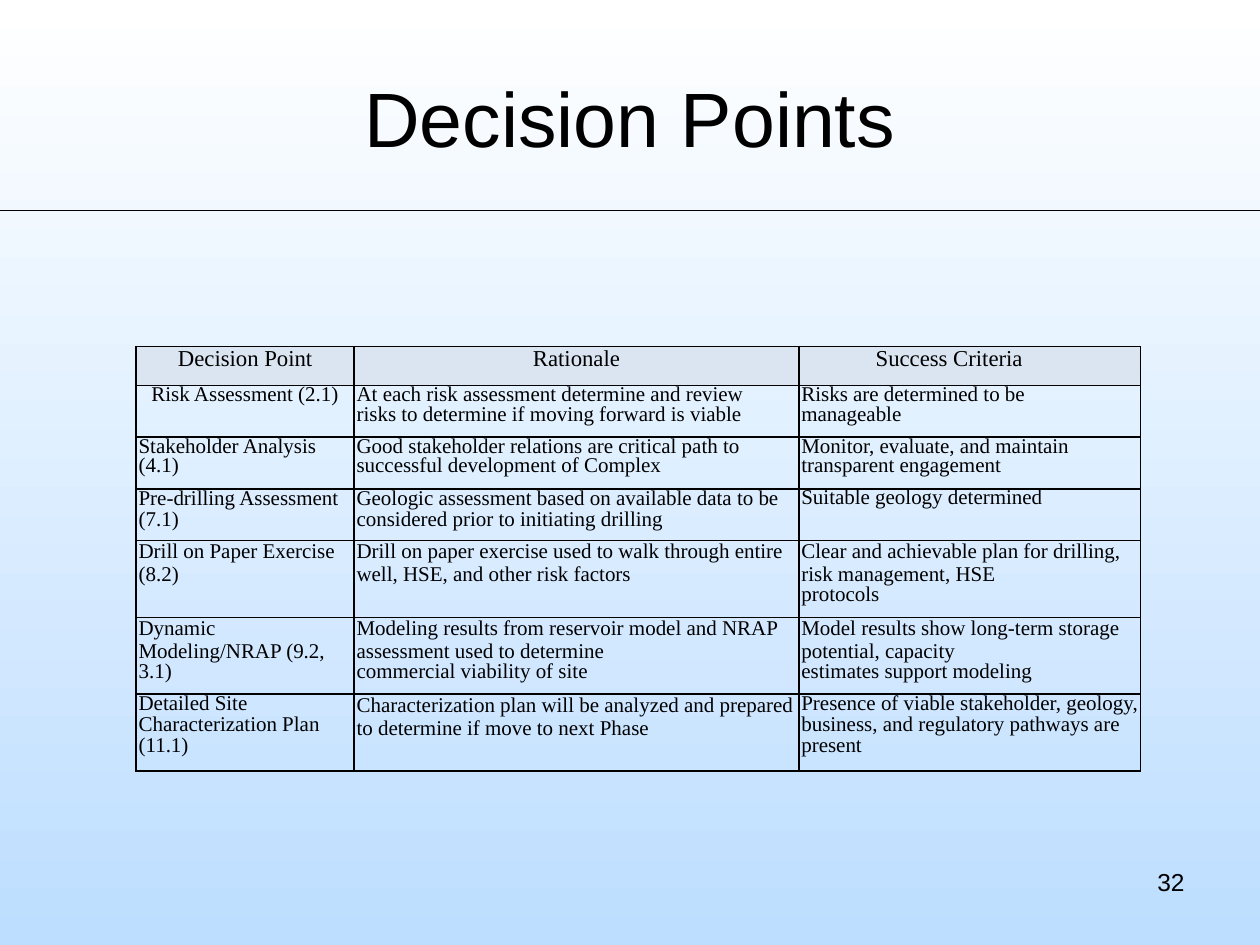
import pptx
import pptx.dml.color
import pptx.enum.shapes
import pptx.enum.text
import pptx.oxml
import pptx.oxml.ns
import pptx.util
from pptx.util import Inches

COLORS = {"ink": "000000", "sky_top": "FFFFFF", "sky_bottom": "BDDEFF", "header": "DBE5F1"}
ALIGN = pptx.enum.text.PP_ALIGN
ANCHOR = pptx.enum.text.MSO_ANCHOR
SERIF = "Times New Roman"
FIRST, NEXT, EVEN, LOOSE = pptx.util.Pt(11.8), pptx.util.Pt(11.2), pptx.util.Pt(12), 0.98

COLUMN_WIDTHS = (1.73, 3.53, 2.71)
ROW_HEIGHTS = (0.31, 0.41, 0.41, 0.41, 0.61, 0.61, 0.61)
HEADINGS = (
    ("Decision Point", ALIGN.CENTER, 0),
    ("Rationale", ALIGN.CENTER, 0),
    ("Success Criteria", ALIGN.LEFT, 0.61),
)
DECISIONS = (
    ((FIRST, "Risk Assessment (2.1)"),
     (FIRST, "At each risk assessment determine and review",
      "risks to determine if moving forward is viable"),
     (FIRST, "Risks are determined to be", "manageable")),
    ((FIRST, "Stakeholder Analysis", "(4.1)"),
     (FIRST, "Good stakeholder relations are critical path to",
      "successful development of Complex"),
     (FIRST, "Monitor, evaluate, and maintain", "transparent engagement")),
    ((EVEN, "Pre-drilling Assessment (7.1)"),
     (EVEN, "Geologic assessment based on available data to be considered "
            "prior to initiating drilling"),
     (FIRST, "Suitable geology determined")),
    ((LOOSE, "Drill on Paper Exercise (8.2)"),
     (LOOSE, "Drill on paper exercise used to walk through entire well, HSE, "
             "and other risk factors"),
     (LOOSE, "Clear and achievable plan for drilling, risk management, HSE", "protocols")),
    ((LOOSE, "Dynamic Modeling/NRAP (9.2,", "3.1)"),
     (LOOSE, "Modeling results from reservoir model and NRAP assessment used to determine",
      "commercial viability of site"),
     (LOOSE, "Model results show long-term storage potential, capacity",
      "estimates support modeling")),
    ((EVEN, "Detailed Site Characterization Plan (11.1)"),
     (LOOSE, "Characterization plan will be analyzed and prepared to determine "
             "if move to next Phase"),
     (EVEN, "Presence of viable stakeholder, geology, business, and regulatory "
            "pathways are present")),
)


def rgb(name):
    """Return the named palette colour."""
    return pptx.dml.color.RGBColor.from_string(COLORS[name])


def write(paragraph, text, size, font="Arial", align=ALIGN.LEFT, indent=0, spacing=None):
    """Put formatted text into a paragraph."""
    paragraph.alignment = align
    paragraph.line_spacing = spacing
    paragraph._p.get_or_add_pPr().set("marL", str(Inches(indent)))
    run = paragraph.add_run()
    run.text = text
    run.font.size = pptx.util.Pt(size)
    run.font.name = font
    run.font.color.rgb = rgb("ink")


def add_label(slide, text, left, top, width, height, anchor=ANCHOR.TOP, **text_format):
    """Add a one-paragraph text box in the given box."""
    frame = slide.shapes.add_textbox(
        Inches(left), Inches(top), Inches(width), Inches(height)).text_frame
    frame.word_wrap = True
    frame.vertical_anchor = anchor
    write(frame.paragraphs[0], text, **text_format)


def paint_background(slide):
    """Fill the slide with a gradient from top to bottom."""
    fill = slide.background.fill
    fill.gradient()
    fill.gradient_angle = 270
    for stop, name, position in zip(fill.gradient_stops, ("sky_top", "sky_bottom"), (0, 1)):
        stop.color.rgb = rgb(name)
        stop.position = position


def add_heading(slide, left, top, width, height):
    """Place the title within its band and the rule along the band's bottom."""
    add_label(slide, "Decision Points", left + 0.5, top + 0.3, width - 1, 1.25,
              anchor=ANCHOR.MIDDLE, size=44, align=ALIGN.CENTER)
    bottom = Inches(top + height)
    rule = slide.shapes.add_connector(
        pptx.enum.shapes.MSO_CONNECTOR.STRAIGHT, Inches(left), bottom,
        Inches(left + width), bottom)
    rule.line.color.rgb = rgb("ink")
    rule.line.width = pptx.util.Pt(0.75)
    properties = rule._element.spPr
    properties.append(pptx.oxml.parse_xml(f"<a:effectLst {pptx.oxml.ns.nsdecls('a')}/>"))


def style_cell(cell, fill=None):
    """Remove the cell's margins, outline it and set its fill."""
    cell.margin_left = cell.margin_right = cell.margin_top = cell.margin_bottom = 0
    properties = cell._tc.get_or_add_tcPr()
    for side in "LRTB":
        properties.append(pptx.oxml.parse_xml(
            f"<a:ln{side} {pptx.oxml.ns.nsdecls('a')} w='{pptx.util.Pt(1)}'><a:solidFill>"
            f"<a:srgbClr val='{COLORS['ink']}'/></a:solidFill></a:ln{side}>"))
    if fill:
        cell.fill.solid()
        cell.fill.fore_color.rgb = rgb(fill)
    else:
        cell.fill.background()


def add_decision_table(slide, left, top):
    """Build the table of decisions from its top left corner."""
    table = slide.shapes.add_table(
        len(ROW_HEIGHTS), len(COLUMN_WIDTHS), Inches(left), Inches(top),
        Inches(sum(COLUMN_WIDTHS)), Inches(sum(ROW_HEIGHTS))).table
    table.horz_banding = False
    for column, width in zip(table.columns, COLUMN_WIDTHS):
        column.width = Inches(width)
    for row, height in zip(table.rows, ROW_HEIGHTS):
        row.height = Inches(height)
    table.first_row = False

    for column, (heading, align, indent) in enumerate(HEADINGS):
        cell = table.cell(0, column)
        style_cell(cell, "header")
        write(cell.text_frame.paragraphs[0], heading, 13, SERIF, align, indent)

    for row, decision in enumerate(DECISIONS, start=1):
        for column, (lead_spacing, *lines) in enumerate(decision):
            cell = table.cell(row, column)
            style_cell(cell)
            centred = row == 1 and column == 0
            for index, line in enumerate(lines):
                frame = cell.text_frame
                paragraph = frame.add_paragraph() if index else frame.paragraphs[0]
                write(paragraph, line, 12, SERIF,
                      align=ALIGN.CENTER if centred else ALIGN.LEFT,
                      indent=0 if centred else 0.02,
                      spacing=NEXT if index else lead_spacing)


def main():
    """Build and save the slide."""
    deck = pptx.Presentation()
    deck.slide_width, deck.slide_height = Inches(10), Inches(7.5)
    slide = deck.slides.add_slide(deck.slide_layouts[6])
    paint_background(slide)
    add_heading(slide, 0, 0, 10, 1.67)
    add_decision_table(slide, 1.08, 2.75)
    add_label(slide, "32", 7.17, 6.83, 2.33, 0.52, size=14, align=ALIGN.RIGHT)
    deck.save("out.pptx")


if __name__ == "__main__":
    main()
